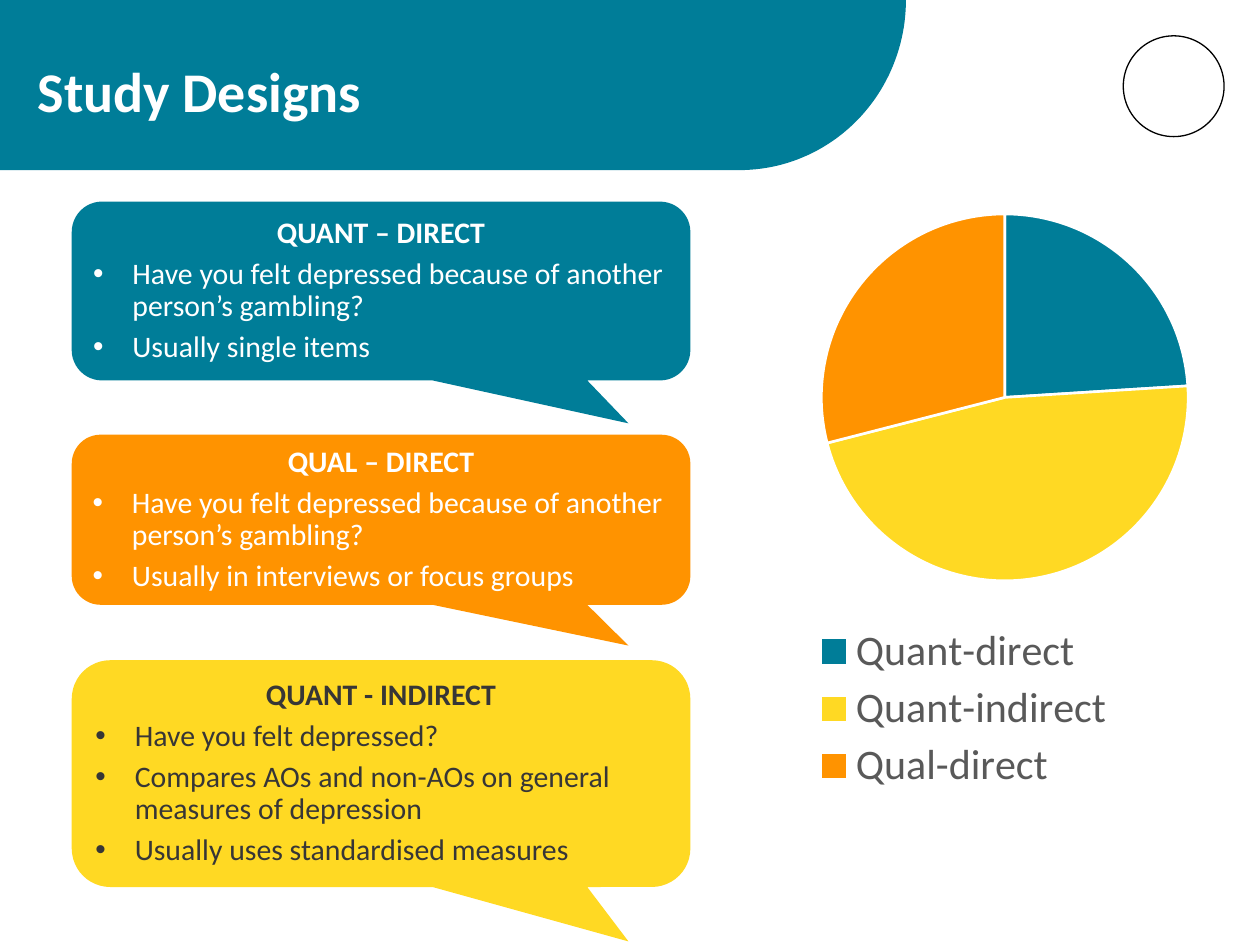
import math

from lxml import etree
from pptx import Presentation
from pptx.chart.data import CategoryChartData
from pptx.dml.color import RGBColor
from pptx.enum.chart import XL_CHART_TYPE, XL_LEGEND_POSITION
from pptx.enum.shapes import MSO_SHAPE
from pptx.enum.text import MSO_ANCHOR, PP_ALIGN
from pptx.oxml import parse_xml
from pptx.oxml.ns import nsdecls, qn
from pptx.util import Pt

TEAL = RGBColor(0x00, 0x7D, 0x98)
YELLOW = RGBColor(0xFF, 0xD9, 0x23)
ORANGE = RGBColor(0xFF, 0x93, 0x00)
WHITE = RGBColor(0xFF, 0xFF, 0xFF)
BLACK = RGBColor(0x00, 0x00, 0x00)
CHARCOAL = RGBColor(0x37, 0x36, 0x36)
GREY = RGBColor(0x59, 0x59, 0x59)

PIE = XL_CHART_TYPE.PIE
LEGEND_BOTTOM = XL_LEGEND_POSITION.BOTTOM
CALLOUT = MSO_SHAPE.ROUNDED_RECTANGULAR_CALLOUT
OVAL = MSO_SHAPE.OVAL
TOP, MIDDLE = MSO_ANCHOR.TOP, MSO_ANCHOR.MIDDLE
LEFT, CENTER = PP_ALIGN.LEFT, PP_ALIGN.CENTER

FONT = "Calibri"
CALLOUT_TAIL = (0.4, 0.74, 0.17)
BULLET_INDENT = Pt(22.5)
QUESTION = "Have you felt depressed because of another person’s gambling?"
DESIGNS = [
    (115.2, 102.2, TEAL, WHITE, "QUANT – DIRECT",
     [QUESTION, "Usually single items"]),
    (248.4, 97.2, ORANGE, WHITE, "QUAL – DIRECT",
     [QUESTION, "Usually in interviews or focus groups"]),
    (377.3, 129.6, YELLOW, CHARCOAL, "QUANT - INDIRECT",
     ["Have you felt depressed?",
      "Compares AOs and non-AOs on general measures of depression",
      "Usually uses standardised measures"]),
]
SHARES = [("Quant-direct", 24, TEAL), ("Quant-indirect", 47, YELLOW),
          ("Qual-direct", 29, ORANGE)]


def write_paragraph(paragraph, text, *, size, color, bold=False, align=LEFT,
                    space_before=0, bullet=False):
    """Fill one paragraph with formatted text."""
    if bullet:
        properties = paragraph._p.get_or_add_pPr()
        properties.set("marL", str(BULLET_INDENT))
        properties.set("indent", str(-BULLET_INDENT))
        bullet_font = etree.SubElement(properties, qn("a:buFont"))
        bullet_font.set("typeface", "Arial")
        etree.SubElement(properties, qn("a:buChar")).set("char", "•")
    paragraph.alignment = align
    paragraph.line_spacing = 0.9
    paragraph.space_before = Pt(space_before)
    run = paragraph.add_run()
    run.text = text
    run.font.name = FONT
    run.font.size = Pt(size)
    run.font.bold = bold
    run.font.color.rgb = color


def add_banner(slide, width, height, curve_start):
    """Draw the header band with its large rounded lower right corner."""
    steps = 48
    angles = [math.pi / 2 * step / steps for step in range(steps + 1)]
    corner = [(Pt(curve_start + (width - curve_start) * math.cos(angle)),
               Pt(height * math.sin(angle))) for angle in angles]
    builder = slide.shapes.build_freeform(0, 0)
    builder.add_line_segments(corner + [(0, Pt(height))], close=True)
    banner = builder.convert_to_shape()
    banner.shadow.inherit = False
    banner.fill.solid()
    banner.fill.fore_color.rgb = TEAL
    banner.line.fill.background()


def add_ring(slide, left, top, diameter):
    """Draw the thin outlined circle in the header."""
    ring = slide.shapes.add_shape(OVAL, Pt(left), Pt(top), Pt(diameter), Pt(diameter))
    ring.shadow.inherit = False
    ring.fill.background()
    ring.line.color.rgb = BLACK
    ring.line.width = Pt(0.75)


def add_title(slide, text):
    """Place the slide title on the banner."""
    title = slide.shapes.add_textbox(Pt(14.4), Pt(33.1), Pt(503.3), Pt(64.1))
    title.text_frame.word_wrap = True
    title.text_frame.vertical_anchor = TOP
    write_paragraph(title.text_frame.paragraphs[0], text, size=32, color=WHITE, bold=True)


def add_design(slide, top, height, fill, ink, heading, points):
    """Draw one study design callout with its heading and bullets."""
    callout = slide.shapes.add_shape(CALLOUT, Pt(41), Pt(top), Pt(353.5), Pt(height))
    callout.shadow.inherit = False
    callout.fill.solid()
    callout.fill.fore_color.rgb = fill
    callout.line.fill.background()
    for index, value in enumerate(CALLOUT_TAIL):
        callout.adjustments[index] = value
    frame = callout.text_frame
    frame.word_wrap = True
    frame.vertical_anchor = MIDDLE
    write_paragraph(frame.paragraphs[0], heading, size=17, color=ink, bold=True,
                    align=CENTER)
    for point in points:
        write_paragraph(frame.add_paragraph(), point, size=17, color=ink,
                        space_before=5, bullet=True)


def manual_layout(x, y, width, height, inner=False):
    """Return a chart layout element in fractions of the chart area."""
    target = '<c:layoutTarget val="inner"/>' if inner else ""
    return parse_xml(
        f'<c:layout {nsdecls("c")}><c:manualLayout>{target}'
        '<c:xMode val="edge"/><c:yMode val="edge"/>'
        f'<c:x val="{x}"/><c:y val="{y}"/><c:w val="{width}"/><c:h val="{height}"/>'
        '</c:manualLayout></c:layout>')


def add_share_chart(slide):
    """Add the pie of study design shares with a stacked legend."""
    data = CategoryChartData()
    data.categories = [name for name, _, _ in SHARES]
    data.add_series("Series 1", [share for _, share, _ in SHARES])
    chart = slide.shapes.add_chart(PIE, Pt(385.2), Pt(88.6), Pt(360), Pt(374.4), data).chart
    chart.has_title = False
    chart.font.name = FONT
    chart.font.size = Pt(10)
    chart.font.color.rgb = BLACK
    plot = chart.plots[0]
    plot.vary_by_categories = True
    for index, (_, _, color) in enumerate(SHARES):
        slice_format = plot.series[0].points[index].format
        slice_format.fill.solid()
        slice_format.fill.fore_color.rgb = color
        slice_format.line.color.rgb = WHITE
        slice_format.line.width = Pt(1.5)

    chart.has_legend = True
    legend = chart.legend
    legend.position = LEGEND_BOTTOM
    legend.include_in_layout = False
    legend.font.name = FONT
    legend.font.size = Pt(24)
    legend.font.color.rgb = GREY

    plot_area = chart._chartSpace.chart.plotArea
    for layout in plot_area.findall(qn("c:layout")):
        plot_area.remove(layout)
    plot_area.insert(0, manual_layout(0.23, 0.09, 0.59, 0.56, inner=True))
    legend_element = legend._element
    for layout in legend_element.findall(qn("c:layout")):
        legend_element.remove(layout)
    legend_element.find(qn("c:legendPos")).addnext(manual_layout(0.21, 0.71, 0.5, 0.27))


def main():
    """Build the study designs slide."""
    deck = Presentation()
    deck.slide_width, deck.slide_height = Pt(720), Pt(540)
    slide = deck.slides.add_slide(deck.slide_layouts[6])
    add_banner(slide, width=517.7, height=97.2, curve_start=422.6)
    add_ring(slide, left=641.9, top=20.5, diameter=57.6)
    add_title(slide, "Study Designs")
    add_share_chart(slide)
    for design in DESIGNS:
        add_design(slide, *design)
    deck.save("out.pptx")


if __name__ == "__main__":
    main()
